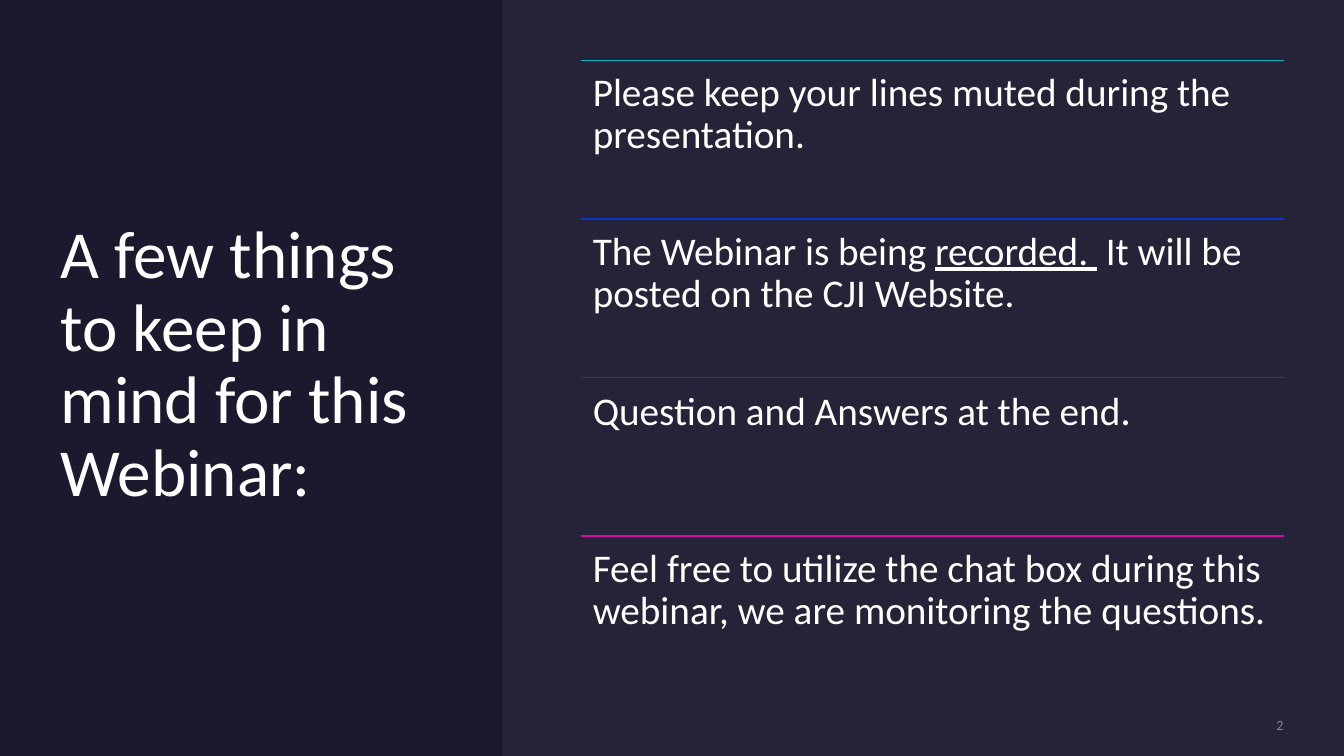
"""Build the webinar housekeeping slide."""
from lxml import etree
from pptx import Presentation
from pptx.dml.color import RGBColor
from pptx.enum.shapes import MSO_CONNECTOR, MSO_SHAPE
from pptx.enum.text import MSO_ANCHOR, PP_ALIGN
from pptx.oxml.ns import qn
from pptx.util import Inches, Pt

STRAIGHT = MSO_CONNECTOR.STRAIGHT
RECTANGLE = MSO_SHAPE.RECTANGLE
MIDDLE = MSO_ANCHOR.MIDDLE
LEFT, RIGHT = PP_ALIGN.LEFT, PP_ALIGN.RIGHT
FONT = "Calibri"


def rgb(value):
    return RGBColor.from_string(value)


def format_text(tf, size, color, inset=0, align=LEFT):
    tf.word_wrap = True
    tf.margin_left = tf.margin_right = Inches(inset)
    tf.margin_top = tf.margin_bottom = Inches(inset)
    p = tf.paragraphs[0]
    p.alignment = align
    p.line_spacing = 0.9
    p.font.name = FONT
    p.font.size = Pt(size)
    p.font.color.rgb = rgb(color)
    return p


prs = Presentation()
prs.slide_width, prs.slide_height = Inches(13.33), Inches(7.5)
s = prs.slides.add_slide(prs.slide_layouts[5])
s.background.fill.solid()
s.background.fill.fore_color.rgb = rgb("1B192E")

panel = s.shapes.add_shape(RECTANGLE, Inches(4.98), 0, Inches(8.35), Inches(7.5))
panel.shadow.inherit = False
panel.line.fill.background()
panel.fill.solid()
panel.fill.fore_color.rgb = rgb("E4E3F0")
color = panel._element.spPr.find(qn("a:solidFill"))[0]
etree.SubElement(color, qn("a:alpha"), val="5000")

title = s.shapes.title
title.left, title.top = Inches(0.6), Inches(0.6)
title.width, title.height = Inches(3.9), Inches(6.06)
title.text = "A few things to keep in mind for this Webinar:"
title.text_frame.vertical_anchor = MIDDLE
format_text(title.text_frame, 48, "FFFFFF")

items = [
    ("12B1BF", ["Please keep your lines muted during the presentation."]),
    ("0F35C6", ["The Webinar is being ", "recorded. ",
                " It will be posted on the CJI Website."]),
    ("6E0DCD", ["Question and Answers at the end", "."]),
    ("D40AA8", ["Feel free to utilize the chat box during this webinar, "
                "we are monitoring the questions."]),
]
x, width, pitch = 5.76, 6.97, 1.573
for i, (line_color, parts) in enumerate(items):
    y = Inches(0.6 + i * pitch)
    line = s.shapes.add_connector(STRAIGHT, Inches(x), y, Inches(x + width), y)
    line.line.color.rgb = rgb(line_color)
    line.line.width = Pt(1)
    etree.SubElement(line._element.spPr, qn("a:effectLst"))

    tf = s.shapes.add_textbox(Inches(x), y, Inches(width), Inches(pitch)).text_frame
    p = format_text(tf, 28, "FFFFFF", inset=0.12)
    for part in parts:
        r = p.add_run()
        r.text = part
        if part == "recorded. ":
            r.font.underline = True
        elif part == ".":
            r.font.size = Pt(30)

number = s.shapes.add_textbox(Inches(10.88), Inches(7.12), Inches(1.85), Inches(0.17))
number.text_frame.text = "2"
number.text_frame.vertical_anchor = MIDDLE
format_text(number.text_frame, 10, "8C8B90", align=RIGHT)

prs.save("out.pptx")
